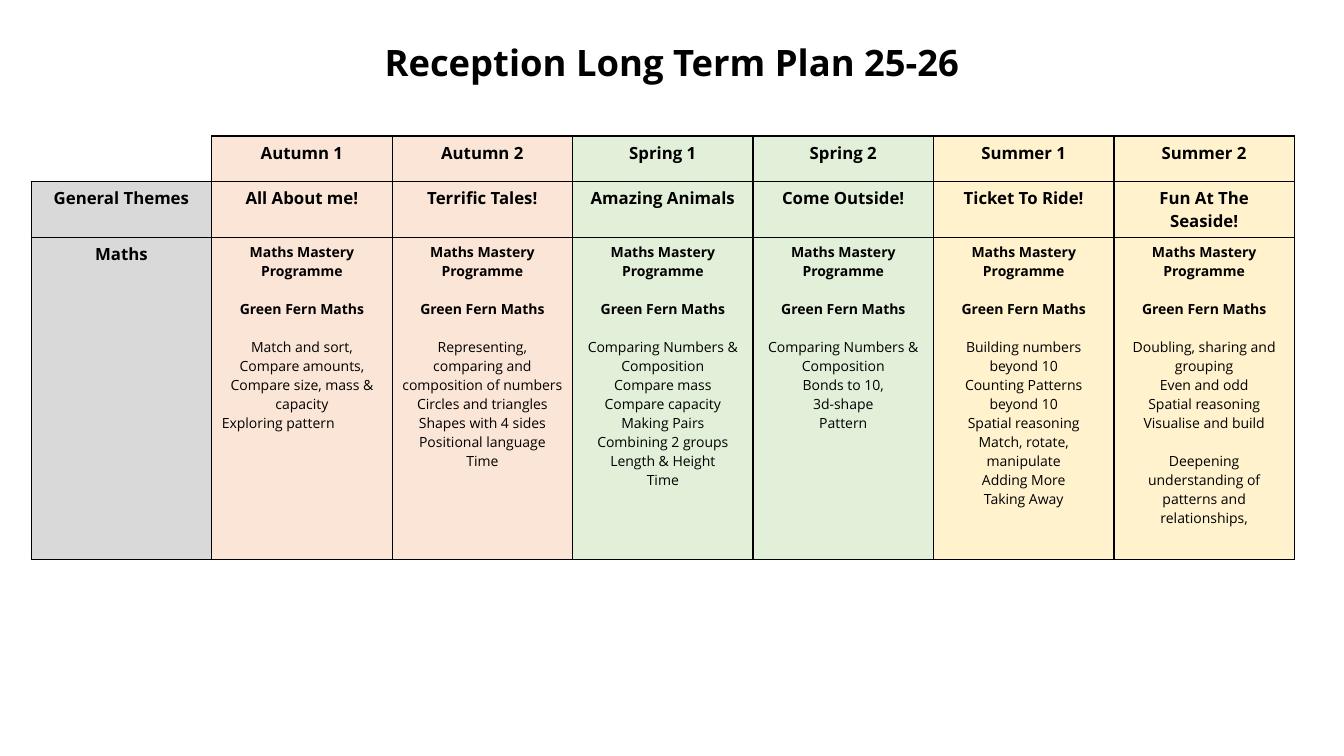
from dataclasses import dataclass
from typing import Any

from lxml.etree import SubElement
from pptx import Presentation
from pptx.dml.color import RGBColor
from pptx.enum.text import MSO_ANCHOR, PP_ALIGN
from pptx.oxml.ns import qn
from pptx.util import Pt

COLOURS = {
    "text": "000000",
    "line": "000000",
    "blank": "FFFFFF",
    "label": "D9D9D9",
    "autumn": "FBE5D6",
    "spring": "E2F0D9",
    "summer": "FFF2CC",
}
FONT = "Open Sans"
HEADING = {"name": FONT, "size": Pt(12), "bold": True}
PROGRAMME = {"name": FONT, "size": Pt(10), "bold": True}
TOPIC = {"name": FONT, "size": Pt(10), "bold": False}
TITLE = {"name": FONT, "size": Pt(26), "bold": True}
BLOCK_GAP = Pt(13.6)
COLUMN_WIDTH = Pt(128.9)
ROW_HEIGHTS = (Pt(32.4), Pt(31), Pt(230.4))
ROW_LABELS = ("", "General Themes", "Maths")
PROGRAMMES = ("Maths Mastery Programme", "Green Fern Maths")


@dataclass(frozen=True)
class Line:
    text: str
    font: dict[str, Any]
    gap: bool = False
    align: PP_ALIGN = PP_ALIGN.CENTER


@dataclass(frozen=True)
class HalfTerm:
    season: str
    number: int
    theme: str
    topics: tuple[str, ...]
    further: tuple[str, ...] = ()
    last_left: bool = False

    def maths_lines(self) -> list[Line]:
        first, second = PROGRAMMES
        lines = [Line(first, PROGRAMME), Line(second, PROGRAMME, gap=True)]
        for block in (self.topics, self.further):
            for index, topic in enumerate(block):
                left = self.last_left and index == len(block) - 1
                align = PP_ALIGN.LEFT if left else PP_ALIGN.CENTER
                lines.append(Line(topic, TOPIC, index == 0, align))
        return lines


HALF_TERMS = (
    HalfTerm("autumn", 1, "All About me!",
             ("Match and sort,", "Compare amounts,", "Compare size, mass & capacity",
              "Exploring pattern"), last_left=True),
    HalfTerm("autumn", 2, "Terrific Tales!",
             ("Representing, comparing and composition of numbers",
              "Circles and triangles", "Shapes with 4 sides", "Positional language",
              "Time")),
    HalfTerm("spring", 1, "Amazing Animals",
             ("Comparing Numbers & Composition", "Compare mass", "Compare capacity",
              "Making Pairs", "Combining 2 groups", "Length & Height", "Time")),
    HalfTerm("spring", 2, "Come Outside!",
             ("Comparing Numbers & Composition", "Bonds to 10,", "3d-shape", "Pattern")),
    HalfTerm("summer", 1, "Ticket To Ride!",
             ("Building numbers beyond 10", "Counting Patterns beyond 10",
              "Spatial reasoning", "Match, rotate, manipulate", "Adding More",
              "Taking Away")),
    HalfTerm("summer", 2, "Fun At The Seaside!",
             ("Doubling, sharing and grouping", "Even and odd", "Spatial reasoning",
              "Visualise and build"),
             ("Deepening understanding of patterns and relationships,",)),
)


def set_values(target: Any, values: dict[str, Any]) -> None:
    for name, value in values.items():
        setattr(target, name, value)


def colour(name: str) -> RGBColor:
    return RGBColor.from_string(COLOURS[name])


def write_lines(frame: Any, lines: list[Line]) -> None:
    for index, line in enumerate(lines):
        para = frame.add_paragraph() if index else frame.paragraphs[0]
        para.alignment = line.align
        if line.gap:
            para.space_before = BLOCK_GAP
        span = para.add_run()
        span.text = line.text
        set_values(span.font, line.font)
        span.font.color.rgb = colour("text")


def draw_borders(cell: Any, hidden: str) -> None:
    properties = cell._tc.get_or_add_tcPr()
    for side in "LRTB":
        border = SubElement(properties, qn(f"a:ln{side}"), w=str(Pt(1)))
        if side in hidden:
            SubElement(border, qn("a:noFill"))
        else:
            fill = SubElement(border, qn("a:solidFill"))
            SubElement(fill, qn("a:srgbClr"), val=COLOURS["line"])


def fill_cell(cell: Any, fill: str, lines: list[Line], hidden: str = "") -> None:
    draw_borders(cell, hidden)
    cell.fill.solid()
    cell.fill.fore_color.rgb = colour(fill)
    write_lines(cell.text_frame, lines)


def add_title(page: Any) -> None:
    title = page.shapes.title
    set_values(title, {"left": Pt(66.2), "top": Pt(17.3),
                       "width": Pt(828), "height": Pt(46.8)})
    set_values(title.text_frame, {"vertical_anchor": MSO_ANCHOR.BOTTOM, "word_wrap": True})
    write_lines(title.text_frame, [Line("Reception Long Term Plan 25-26", TITLE)])
    title.text_frame.paragraphs[0].line_spacing = 0.9


def add_plan(page: Any) -> None:
    columns = len(HALF_TERMS) + 1
    table = page.shapes.add_table(len(ROW_HEIGHTS), columns, Pt(22.3), Pt(97.2),
                                  COLUMN_WIDTH * columns, sum(ROW_HEIGHTS)).table
    set_values(table, {"first_row": False, "horz_banding": False})
    for column in table.columns:
        column.width = COLUMN_WIDTH
    for row, height in zip(table.rows, ROW_HEIGHTS):
        row.height = height
    for index, label in enumerate(ROW_LABELS):
        if label:
            fill_cell(table.cell(index, 0), "label", [Line(label, HEADING)])
        else:
            fill_cell(table.cell(index, 0), "blank", [], hidden="LT")
    for index, term in enumerate(HALF_TERMS, start=1):
        name = f"{term.season.capitalize()} {term.number}"
        contents = ([Line(name, HEADING)], [Line(term.theme, HEADING)], term.maths_lines())
        for row_index, lines in enumerate(contents):
            fill_cell(table.cell(row_index, index), term.season, lines)


def main() -> None:
    deck = Presentation()
    set_values(deck, {"slide_width": Pt(960), "slide_height": Pt(540)})
    page = deck.slides.add_slide(deck.slide_layouts[5])
    add_plan(page)
    add_title(page)
    deck.save("out.pptx")


if __name__ == "__main__":
    main()
